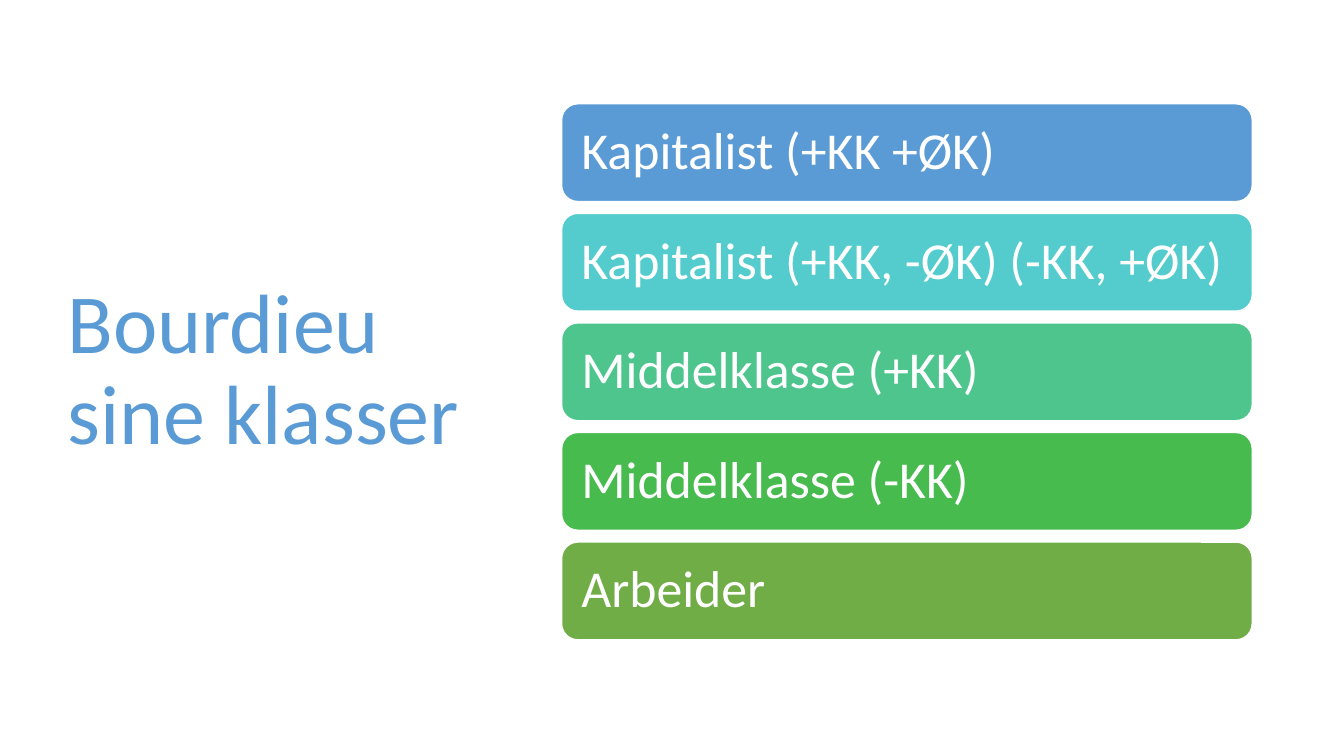
import pptx
import pptx.util
import pptx.dml.color
import pptx.enum.shapes
import pptx.enum.text
from pptx.util import Inches


def rgb(value):
    return pptx.dml.color.RGBColor.from_string(value)


def format_text(frame, size, color):
    frame.word_wrap = True
    frame.auto_size = pptx.enum.text.MSO_AUTO_SIZE.NONE
    frame.vertical_anchor = pptx.enum.text.MSO_ANCHOR.MIDDLE
    paragraph = frame.paragraphs[0]
    paragraph.alignment = pptx.enum.text.PP_ALIGN.LEFT
    paragraph.line_spacing = 0.9
    font = paragraph.runs[0].font
    font.name = "Calibri"
    font.size = pptx.util.Pt(size)
    font.color.rgb = rgb(color)


presentation = pptx.Presentation()
presentation.slide_width = Inches(13.33)
presentation.slide_height = Inches(7.5)
slide = presentation.slides.add_slide(presentation.slide_layouts[5])

heading = slide.shapes.title
heading.left, heading.top = Inches(0.57), Inches(0.68)
heading.width, heading.height = Inches(4.16), Inches(6.02)
heading.text_frame.text = "Bourdieu sine klasser"
format_text(heading.text_frame, 60, "5B9BD5")

social_classes = [
    ("Kapitalist (+KK +ØK)", "5B9BD5"),
    ("Kapitalist (+KK, -ØK) (-KK, +ØK)", "54CCCD"),
    ("Middelklasse (+KK)", "4DC58D"),
    ("Middelklasse (-KK)", "48BB4F"),
    ("Arbeider", "70AD47"),
]
first_top = 1.03
class_pitch = 1.087

for index, (class_label, class_color) in enumerate(social_classes):
    class_bar = slide.shapes.add_shape(
        pptx.enum.shapes.MSO_SHAPE.ROUNDED_RECTANGLE,
        Inches(5.57), Inches(first_top + index * class_pitch),
        Inches(6.85), Inches(0.97),
    )
    class_bar.shadow.inherit = False
    class_bar.fill.solid()
    class_bar.fill.fore_color.rgb = rgb(class_color)
    class_bar.line.color.rgb = rgb("FFFFFF")
    class_bar.line.width = pptx.util.Pt(1)
    frame = class_bar.text_frame
    frame.margin_left = frame.margin_right = Inches(0.15)
    frame.margin_top = frame.margin_bottom = Inches(0.15)
    frame.text = class_label
    format_text(frame, 37, "FFFFFF")

presentation.save("out.pptx")
